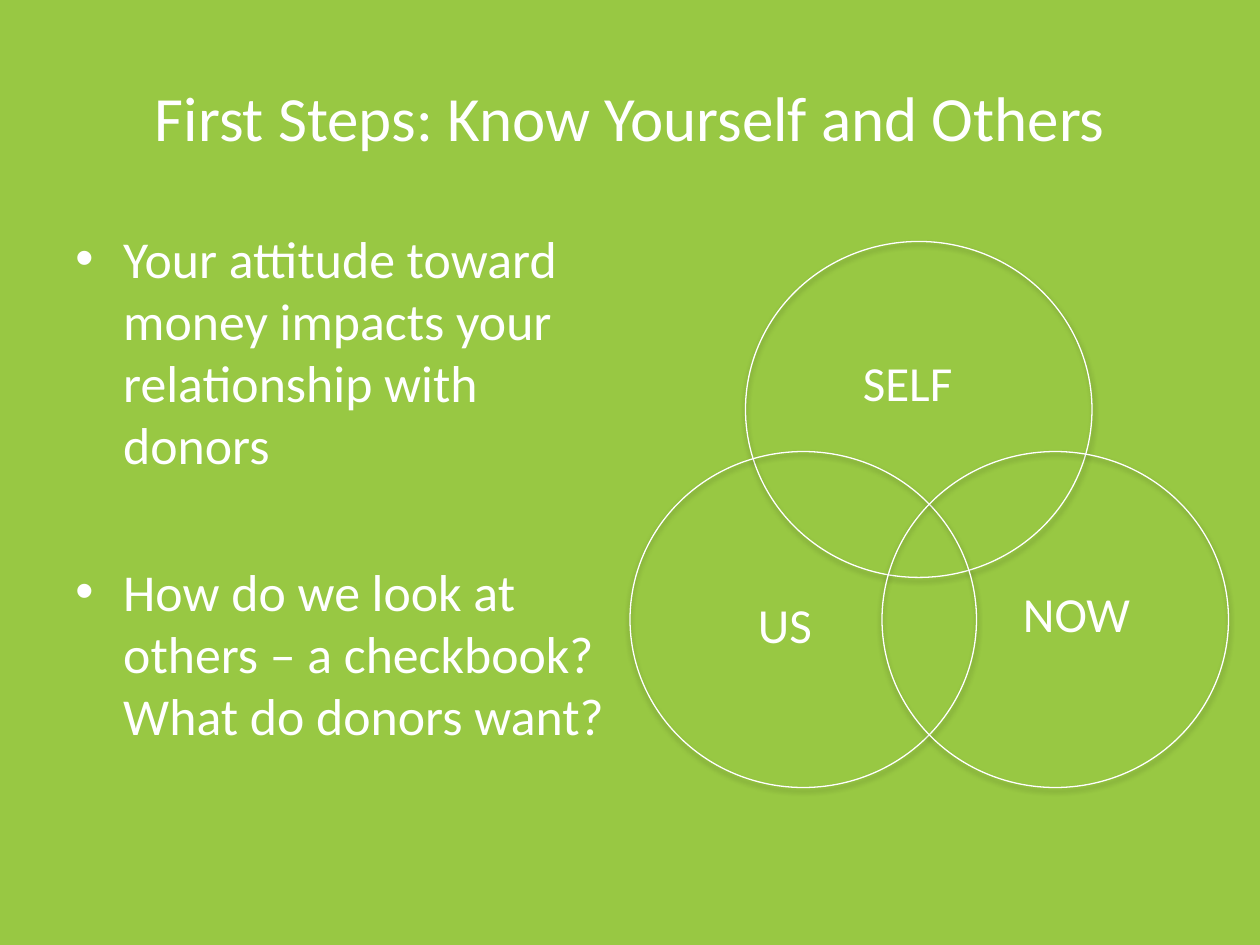
"""Build the slide on knowing yourself and others, with a three-circle diagram."""
import pptx
import pptx.dml.color
import pptx.enum.shapes
import pptx.enum.text
import pptx.oxml
import pptx.oxml.ns
import pptx.util

WHITE = "FFFFFF"
GREEN = "98C843"
NAMESPACE = pptx.oxml.ns.nsdecls("a")

deck = pptx.Presentation()
deck.slide_width = pptx.util.Inches(10)
deck.slide_height = pptx.util.Inches(7.5)
COLUMN = deck.slide_width // 120
ROW = deck.slide_height // 90


def paint(target, colour):
    target.rgb = pptx.dml.color.RGBColor.from_string(colour)


def style(para, size):
    for span in para.runs:
        span.font.name = "Calibri"
        span.font.size = pptx.util.Pt(size)
        paint(span.font.color, WHITE)


page = deck.slides.add_slide(deck.slide_layouts[5])
page.background.fill.solid()
paint(page.background.fill.fore_color, GREEN)

title = page.shapes.title
title.left, title.top = 6 * COLUMN, int(3.6 * ROW)
title.width, title.height = 108 * COLUMN, 15 * ROW
title.text_frame.text = "First Steps: Know Yourself and Others"
title.text_frame.vertical_anchor = pptx.enum.text.MSO_ANCHOR.MIDDLE
title.text_frame.paragraphs[0].alignment = pptx.enum.text.PP_ALIGN.CENTER
style(title.text_frame.paragraphs[0], 36)

body = page.shapes.add_textbox(6 * COLUMN, 21 * ROW, 53 * COLUMN, int(59.4 * ROW))
body.text_frame.word_wrap = True
body.text_frame.text = (
    "Your attitude toward money impacts your relationship with donors\n"
    "How do we look at others – a checkbook? What do donors want?"
)
for para, gap in zip(body.text_frame.paragraphs, (0, 48)):
    properties = para._p.get_or_add_pPr()
    properties.set("marL", str(pptx.util.Inches(0.38)))
    properties.set("indent", str(pptx.util.Inches(-0.38)))
    properties.append(pptx.oxml.parse_xml(f'<a:buFont {NAMESPACE} typeface="Arial"/>'))
    properties.append(pptx.oxml.parse_xml(f'<a:buChar {NAMESPACE} char="•"/>'))
    para.space_before = pptx.util.Pt(gap)
    style(para, 29.6)

for left, top in ((71, 23), (60, 43), (84, 43)):
    circle = page.shapes.add_shape(
        pptx.enum.shapes.MSO_SHAPE.OVAL, left * COLUMN, top * ROW, 33 * COLUMN, 32 * ROW
    )
    circle.fill.background()
    circle.line.width = pptx.util.Pt(0.75)
    paint(circle.line.color, WHITE)
    circle.shadow.inherit = False
    effects = circle._element.spPr.find(pptx.oxml.ns.qn("a:effectLst"))
    effects.append(pptx.oxml.parse_xml(
        f'<a:outerShdw {NAMESPACE} blurRad="{pptx.util.Pt(3.1)}" dist="{pptx.util.Pt(1.8)}"'
        ' dir="5400000" rotWithShape="0"><a:srgbClr val="000000">'
        '<a:alpha val="35000"/></a:srgbClr></a:outerShdw>'
    ))

for name, left, top, width in (
    ("SELF", 81, 33, 13), ("US", 71, 56, 8.5), ("NOW", 96.25, 55, 14.75)
):
    label = page.shapes.add_textbox(
        int(left * COLUMN), top * ROW, int(width * COLUMN), int(10.5 * ROW)
    )
    label.text_frame.word_wrap = False
    label.text_frame.text = name
    style(label.text_frame.paragraphs[0], 28)

deck.save("out.pptx")
